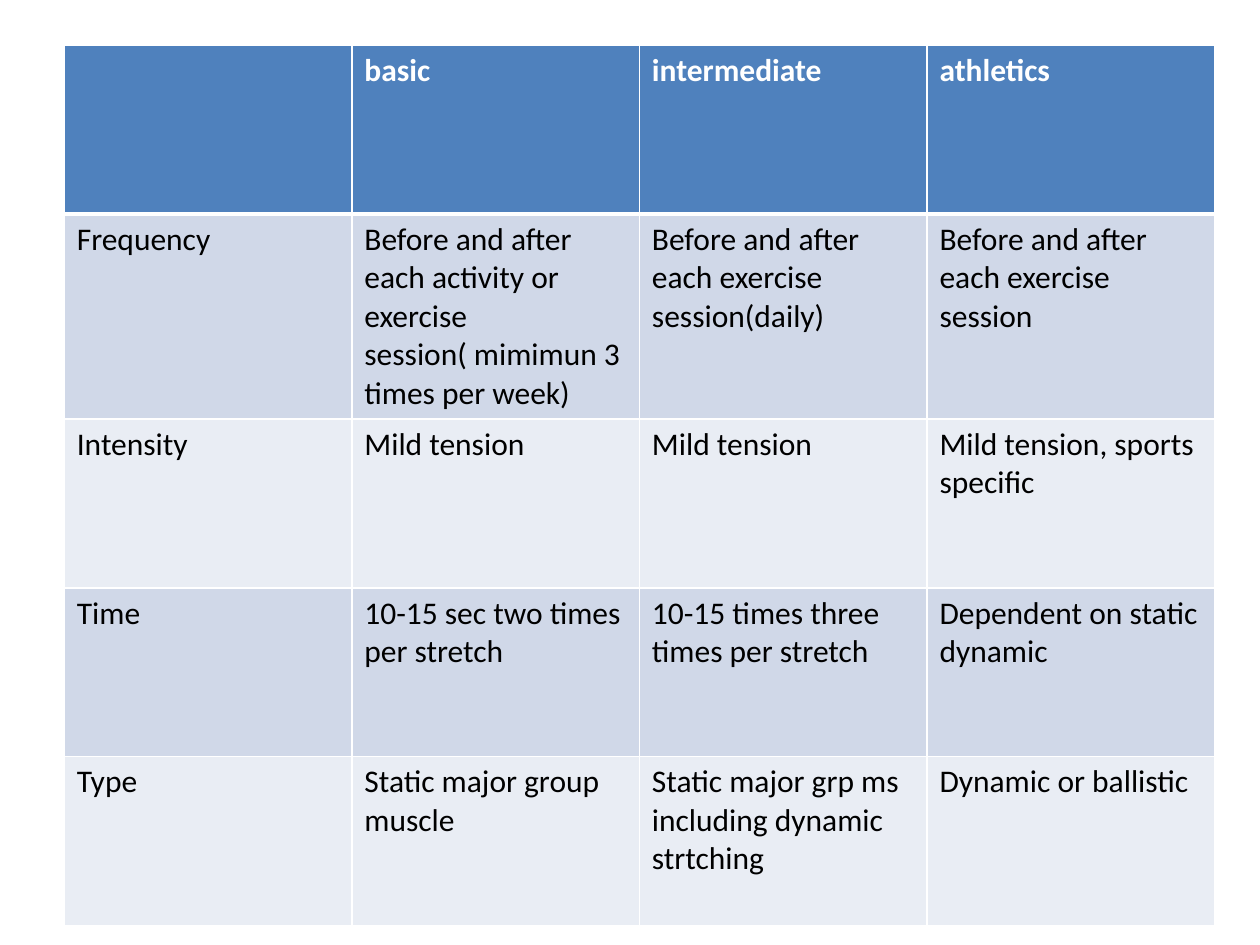
from pptx import Presentation
from pptx.dml.color import RGBColor
from pptx.oxml.ns import qn
from pptx.util import Inches, Pt
from lxml.etree import Element, SubElement

COLORS = {"header": "4F81BD", "band_dark": "D0D8E8", "band_light": "E9EDF4",
          "white": "FFFFFF", "black": "000000"}

STRETCHING_PLAN = [
    ["", "basic", "intermediate", "athletics"],
    ["Frequency",
     "Before and after each activity or exercise session( mimimun 3 times per week)",
     "Before and after each exercise session(daily)",
     "Before and after each exercise session"],
    ["Intensity", "Mild tension", "Mild tension", "Mild tension, sports specific"],
    ["Time", "10-15 sec two times per stretch", "10-15 times three times per stretch",
     "Dependent on static dynamic"],
    ["Type", "Static major group muscle",
     "Static major grp ms including dynamic strtching", "Dynamic or ballistic"],
]


def color(name):
    return RGBColor.from_string(COLORS[name])


def set_borders(cell, widths):
    """Draw white cell borders; widths maps L, R, T and B to points."""
    properties = cell._tc.get_or_add_tcPr()
    for index, side in enumerate("LRTB"):
        line = Element(qn(f"a:ln{side}"), w=str(Pt(widths[side])))
        fill = SubElement(line, qn("a:solidFill"))
        SubElement(fill, qn("a:srgbClr"), val=COLORS["white"])
        properties.insert(index, line)


def fill_cell(cell, text, row_number):
    is_header = row_number == 0
    band = "band_dark" if row_number % 2 else "band_light"
    cell.fill.solid()
    cell.fill.fore_color.rgb = color("header" if is_header else band)
    set_borders(cell, {"L": 1, "R": 1, "T": 3 if row_number == 1 else 1,
                       "B": 3 if is_header else 1})
    para = cell.text_frame.paragraphs[0]
    para.font.size = Pt(18)
    if text:
        span = para.add_run()
        span.text = text
        span.font.name = "Calibri"
        span.font.size = Pt(18)
        span.font.bold = is_header
        span.font.color.rgb = color("white" if is_header else "black")


def add_plan_table(page, left, top, width, height):
    rows, columns = len(STRETCHING_PLAN), len(STRETCHING_PLAN[0])
    table = page.shapes.add_table(rows, columns, left, top, width, height).table
    for row_number, texts in enumerate(STRETCHING_PLAN):
        for column_number, text in enumerate(texts):
            fill_cell(table.cell(row_number, column_number), text, row_number)


def main():
    deck = Presentation()
    deck.slide_width, deck.slide_height = Inches(10), Inches(7.5)
    page = deck.slides.add_slide(deck.slide_layouts[6])
    add_plan_table(page, Inches(0.51), Inches(0.36), Inches(9.13), Inches(6.7))
    deck.save("out.pptx")


if __name__ == "__main__":
    main()
